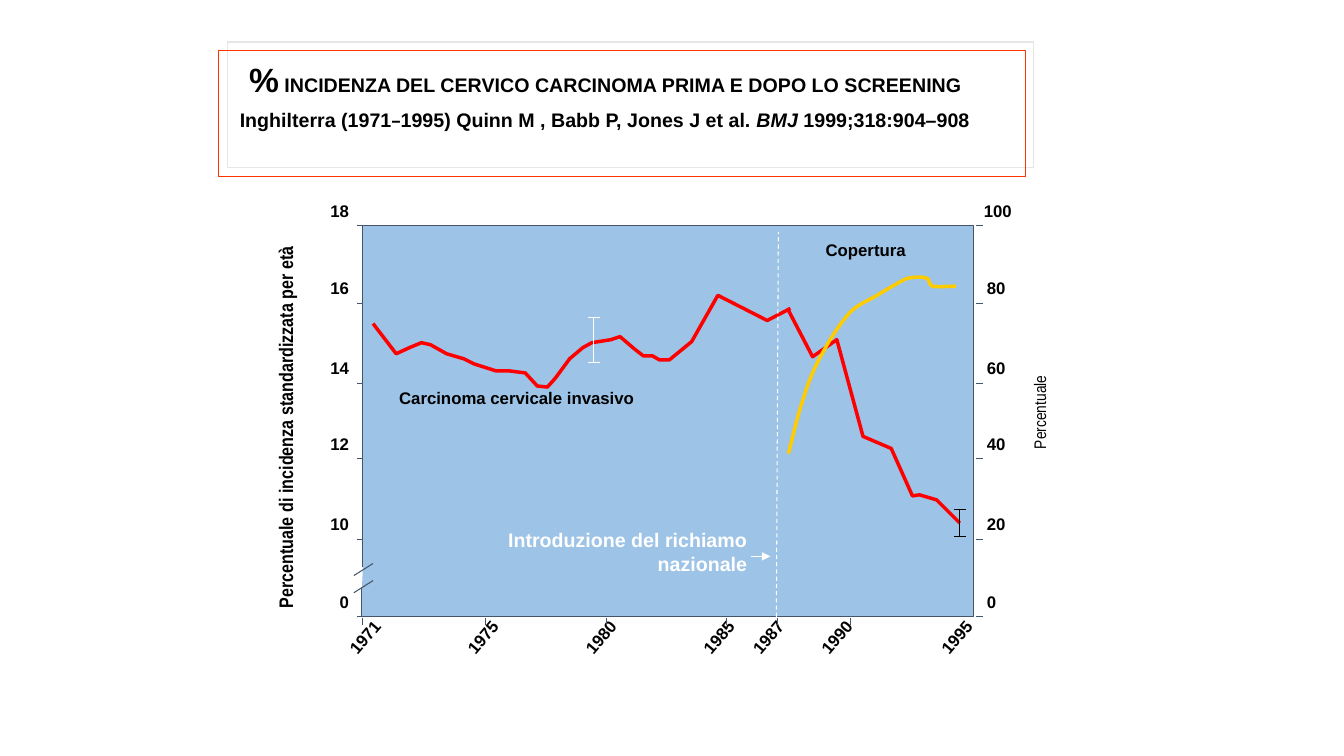
from lxml.etree import SubElement
from pptx import Presentation
from pptx.dml.color import RGBColor
from pptx.enum.dml import MSO_LINE
from pptx.enum.shapes import MSO_CONNECTOR, MSO_SHAPE
from pptx.enum.text import PP_ALIGN
from pptx.oxml.ns import qn
from pptx.util import Inches, Pt

BLACK = RGBColor(0x00, 0x00, 0x00)
WHITE = RGBColor(0xFF, 0xFF, 0xFF)
SLATE = RGBColor(0x44, 0x54, 0x6A)
SKY = RGBColor(0x9D, 0xC3, 0xE6)
RED = RGBColor(0xFF, 0x00, 0x00)
YELLOW = RGBColor(0xFF, 0xCC, 0x00)
ORANGE = RGBColor(0xFF, 0x33, 0x00)

# text, size, font, italic
TITLE = [
    [(" %", 24, "Arial", False),
     (" INCIDENZA DEL CERVICO CARCINOMA PRIMA E DOPO LO SCREENING", 14, "Arial", False)],
    [("Inghilterra (1971", 14, "Arial", False), ("–", 14, "Arial Narrow", False),
     ("1995) Quinn M , Babb P, Jones J et al. ", 14, "Arial", False),
     ("BMJ", 14, "Arial", True), (" 1999;318:904–908", 14, "Arial", False)],
]
# tick height, incidence label, coverage label
LEVELS = [(6.12, "0", "0"), (5.35, "10", "20"), (4.55, "12", "40"),
          (3.8, "14", "60"), (3.01, "16", "80"), (2.24, "18", "100")]
# year, label centre, tick position
YEARS = [("1971", 3.49, 3.6), ("1975", 4.66, 4.82), ("1980", 5.83, 6.02),
         ("1985", 7.0, 7.21), ("1987", 7.49, 7.71), ("1990", 8.17, 8.44),
         ("1995", 9.36, None)]
PLOT_LEFT, PLOT_RIGHT, PLOT_BOTTOM = 3.6, 9.68, 6.12
PLOT_AREA = [(3.6, 5.63), (3.6, 2.24), (9.66, 2.24), (9.66, 6.12), (3.59, 6.12), (3.59, 5.83)]
INCIDENCE_BEFORE = [
    (3.7, 3.21), (3.93, 3.51), (4.06, 3.45), (4.18, 3.4), (4.27, 3.42), (4.43, 3.51),
    (4.6, 3.56), (4.7, 3.61), (4.92, 3.68), (5.05, 3.68), (5.21, 3.7), (5.33, 3.83),
    (5.43, 3.84), (5.51, 3.75), (5.65, 3.56), (5.78, 3.45), (5.87, 3.4), (6.06, 3.37),
    (6.15, 3.34), (6.29, 3.46), (6.38, 3.53), (6.47, 3.53), (6.54, 3.57), (6.64, 3.57),
    (6.86, 3.39), (7.12, 2.93), (7.61, 3.18), (7.84, 3.06)]
INCIDENCE_AFTER = [
    (7.81, 3.06), (8.06, 3.54), (8.3, 3.37), (8.56, 4.33), (8.84, 4.45), (9.05, 4.92),
    (9.12, 4.91), (9.29, 4.96), (9.52, 5.19)]
# start, then two control points and an end point for each curve
COVERAGE = [
    (7.82, 4.5), (7.87, 4.31), (7.91, 4.12), (7.97, 3.95), (8.02, 3.78), (8.08, 3.64),
    (8.16, 3.5), (8.24, 3.35), (8.34, 3.2), (8.43, 3.1), (8.52, 3.01), (8.62, 2.98),
    (8.7, 2.93), (8.78, 2.88), (8.87, 2.83), (8.92, 2.8), (8.97, 2.78), (8.96, 2.77),
    (9.01, 2.76), (9.05, 2.75), (9.15, 2.74), (9.19, 2.76), (9.23, 2.77), (9.2, 2.82),
    (9.25, 2.84), (9.3, 2.85), (9.39, 2.84), (9.48, 2.84)]
# centre, top, bottom, half width of the caps, colour
ERROR_BARS = [(5.89, 3.15, 3.6, 0.06, WHITE), (9.52, 5.05, 5.32, 0.06, BLACK)]
AXIS_BREAKS = [5.59, 5.76]

deck = Presentation()
deck.slide_width, deck.slide_height = Inches(13.33), Inches(7.5)
page = deck.slides.add_slide(deck.slide_layouts[6])
shapes = page.shapes


def add_box(left, top, width, height, rotation=0):
    box = shapes.add_textbox(Inches(left), Inches(top), Inches(width), Inches(height))
    box.rotation = rotation
    box.text_frame.word_wrap = True
    return box


def style(span, size, font="Arial", bold=True, color=BLACK):
    span.font.size, span.font.name, span.font.bold = Pt(size), font, bold
    span.font.color.rgb = color


def add_label(text, place, align=PP_ALIGN.LEFT, rotation=0, size=12, **look):
    box = add_box(*place, rotation)
    box.text_frame.text = text
    para = box.text_frame.paragraphs[0]
    para.alignment = align
    style(para.runs[0], size, **look)


def add_line(start, end, color=SLATE):
    line = shapes.add_connector(MSO_CONNECTOR.STRAIGHT, *map(Inches, start + end))
    line.line.color.rgb, line.line.width = color, Pt(0.75)
    SubElement(line._element.spPr, qn("a:effectLst"))
    return line


def add_outline(points, color, width, fill=None):
    emu = [(Inches(x), Inches(y)) for x, y in points]
    builder = shapes.build_freeform(*emu[0])
    builder.add_line_segments(emu[1:], close=False)
    outline = builder.convert_to_shape()
    outline.shadow.inherit = False
    outline.line.color.rgb, outline.line.width = color, Pt(width)
    if fill is None:
        outline.fill.background()
    else:
        outline.fill.solid()
        outline.fill.fore_color.rgb = fill
    return outline


def bend(outline):
    """Turn every three straight segments into one cubic curve."""
    segments = list(outline._element.iter(qn("a:lnTo")))
    track = segments[0].getparent()
    for first in range(0, len(segments), 3):
        curve = SubElement(track, qn("a:cubicBezTo"))
        for segment in segments[first:first + 3]:
            curve.append(segment[0])
            track.remove(segment)


# Axes
add_outline(PLOT_AREA, SLATE, 0.75, SKY)
for height, incidence, coverage in LEVELS:
    add_label(incidence, (2.92, height - 0.3, 0.64, 0.3), PP_ALIGN.RIGHT)
    right_label = 9.66 if coverage == "100" else 9.69
    add_label(coverage, (right_label, height - 0.3, 0.73, 0.3))
    add_line((PLOT_LEFT - 0.06, height), (PLOT_LEFT, height))
    add_line((PLOT_RIGHT, height), (PLOT_RIGHT + 0.07, height))
for year, centre, tick in YEARS:
    add_label(year, (centre - 0.48, 6.32, 0.96, 0.3), PP_ALIGN.RIGHT, 310.4)
    if tick:
        add_line((tick, PLOT_BOTTOM + 0.08), (tick, PLOT_BOTTOM + 0.01))
for height in AXIS_BREAKS:
    add_line((3.7, height), (3.51, height + 0.12))
add_label("Percentuale", (9.4, 3.94, 1.82, 0.3), PP_ALIGN.CENTER, 270,
          font="Arial Narrow", bold=False)
add_label("Percentuale di incidenza standardizzata per età", (0.62, 4.07, 4.43, 0.34),
          PP_ALIGN.CENTER, 270, 14, font="Arial Narrow")

# Curves
for points in (INCIDENCE_BEFORE, INCIDENCE_AFTER):
    add_outline(points, RED, 2.5)
bend(add_outline(COVERAGE, YELLOW, 2.5))
for centre, top, bottom, half, color in ERROR_BARS:
    add_line((centre, top), (centre, bottom), color)
    for height in (top, bottom):
        add_line((centre - half, height), (centre + half, height), color)

# Start of the national recall
add_line((7.7, PLOT_BOTTOM), (7.72, 2.3), WHITE).line.dash_style = MSO_LINE.DASH
arrow = add_line((7.45, 5.52), (7.64, 5.52), WHITE)
SubElement(arrow.line._get_or_add_ln(), qn("a:tailEnd"), type="triangle")
add_label("Introduzione del richiamo nazionale", (4.94, 5.19, 2.57, 0.57),
          PP_ALIGN.RIGHT, size=14, color=WHITE)
add_label("Carcinoma cervicale invasivo", (3.86, 3.8, 3.32, 0.3))
add_label("Copertura", (8.09, 2.33, 1.56, 0.3))

# Title
title = add_box(2.28, 0.58, 8.72, 1.13).text_frame
for number, pieces in enumerate(TITLE):
    para = title.add_paragraph() if number else title.paragraphs[0]
    para.line_spacing = 0.9
    if number:
        para.space_before = Pt(8)
    for text, size, font, italic in pieces:
        span = para.add_run()
        span.text = text
        style(span, size, font)
        span.font.italic = italic

frame = shapes.add_shape(MSO_SHAPE.RECTANGLE, Inches(2.17), Inches(0.5), Inches(8), Inches(1.25))
frame.fill.background()
frame.line.color.rgb, frame.line.width = ORANGE, Pt(0.75)
frame.shadow.inherit = False
effects = frame._element.spPr.find(qn("a:effectLst"))
shadow = SubElement(effects, qn("a:outerShdw"), dist=str(Pt(8.5)), dir=str(315 * 60000),
                    algn="ctr", rotWithShape="0")
SubElement(shadow, qn("a:srgbClr"), val="E7E6E6")

deck.save("out.pptx")
